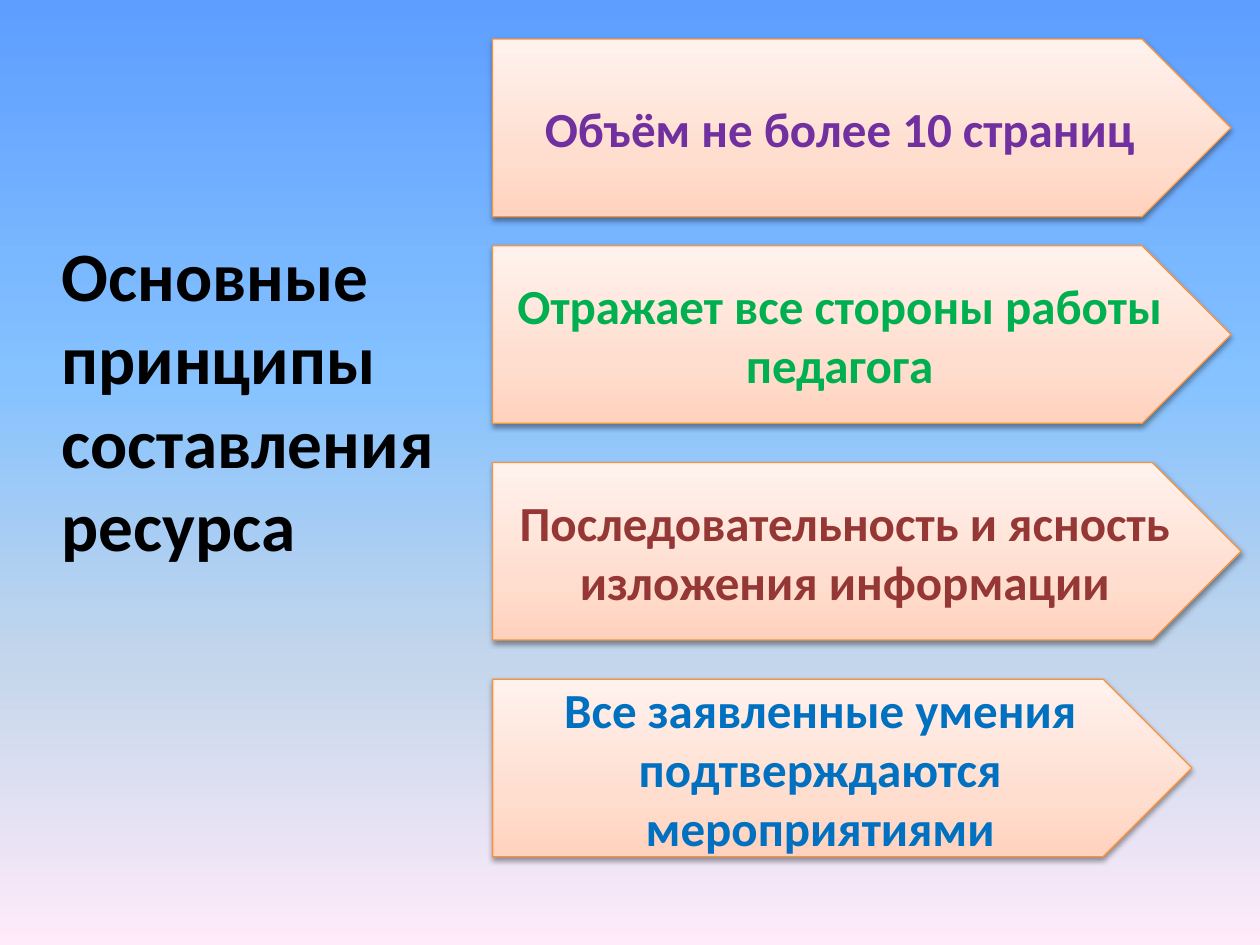
"""Build a slide listing the main principles of composing a resource."""
from dataclasses import dataclass

from lxml.etree import SubElement
from pptx import Presentation
from pptx.dml.color import RGBColor
from pptx.enum.shapes import MSO_SHAPE
from pptx.enum.text import MSO_ANCHOR, PP_ALIGN
from pptx.oxml.ns import qn
from pptx.util import Inches, Pt

COLORS = {
    "title": "000000",
    "outline": "F69240",
    "shadow": "000000",
    "purple": "7030A0",
    "green": "00B050",
    "maroon": "953735",
    "blue": "0070C0",
}
SKY = {0: "5E9EFF", 40: "85C2FF", 70: "C4D6EB", 100: "FFEBFA"}
PEACH = {0: "FFD2BD", 35: "FFDED0", 100: "FFF2ED"}
FONT = "Calibri"
UNIT = Inches(0.1)
ARROW_LEFT, ARROW_HEIGHT = 39.1, 14.1


@dataclass(frozen=True)
class Principle:
    """An arrow whose top and width are in grid units."""
    text: str
    color: str
    top: float
    width: float


PRINCIPLES = [
    Principle("Объём не более 10 страниц", "purple", 3.1, 58.6),
    Principle("Отражает все стороны работы педагога", "green", 19.5, 58.6),
    Principle("Последовательность и ясность изложения информации", "maroon", 36.7, 59.4),
    Principle("Все заявленные умения подтверждаются мероприятиями", "blue", 53.9, 55.5),
]


def grid(*units: float) -> list[int]:
    """Turn grid units into lengths."""
    return [round(u * UNIT) for u in units]


def set_gradient(fill, owner, stops: dict[int, str], angle: int) -> None:
    """Give the fill inside owner a linear gradient, angle clockwise."""
    fill.gradient()
    fill.gradient_angle = (360 - angle) % 360
    gs_lst = next(owner.iter(qn("a:gsLst")))
    for gs in list(gs_lst):
        gs_lst.remove(gs)
    for pos, color in stops.items():
        gs = SubElement(gs_lst, qn("a:gs"), pos=str(pos * 1000))
        SubElement(gs, qn("a:srgbClr"), val=color)


def add_shadow(sp) -> None:
    """Drop a soft shadow below the shape."""
    sp.shadow.inherit = False
    effects = next(sp.element.iter(qn("a:effectLst")))
    shadow = SubElement(effects, qn("a:outerShdw"), blurRad=str(Pt(3.1)),
                        dist=str(Pt(1.6)), dir="5400000", rotWithShape="0")
    color = SubElement(shadow, qn("a:srgbClr"), val=COLORS["shadow"])
    SubElement(color, qn("a:alpha"), val="38000")


def write(sp, text: str, size: float, color: str, align: PP_ALIGN) -> None:
    """Write one bold paragraph, centred vertically."""
    tf = sp.text_frame
    tf.word_wrap = True
    tf.vertical_anchor = MSO_ANCHOR.MIDDLE
    p = tf.paragraphs[0]
    p.alignment = align
    r = p.add_run()
    r.text = text
    r.font.name = FONT
    r.font.size = Pt(size)
    r.font.bold = True
    r.font.color.rgb = RGBColor.from_string(COLORS[color])


def add_principle(s, item: Principle) -> None:
    """Draw one principle as a pentagon arrow."""
    sp = s.shapes.add_shape(MSO_SHAPE.PENTAGON,
                            *grid(ARROW_LEFT, item.top, item.width, ARROW_HEIGHT))
    set_gradient(sp.fill, sp.element, PEACH, 270)
    sp.line.color.rgb = RGBColor.from_string(COLORS["outline"])
    sp.line.width = Pt(0.75)
    add_shadow(sp)
    write(sp, item.text, 28, item.color, PP_ALIGN.CENTER)


def main() -> None:
    """Build and save the slide."""
    prs = Presentation()
    prs.slide_width, prs.slide_height = grid(100, 75)
    s = prs.slides.add_slide(prs.slide_layouts[6])
    set_gradient(s.background.fill, s.element, SKY, 90)
    title = s.shapes.add_textbox(*grid(3.9, 18.7, 38, 25.9))
    write(title, "Основные принципы составления ресурса", 39.6, "title", PP_ALIGN.LEFT)
    for item in PRINCIPLES:
        add_principle(s, item)
    prs.save("out.pptx")


if __name__ == "__main__":
    main()
